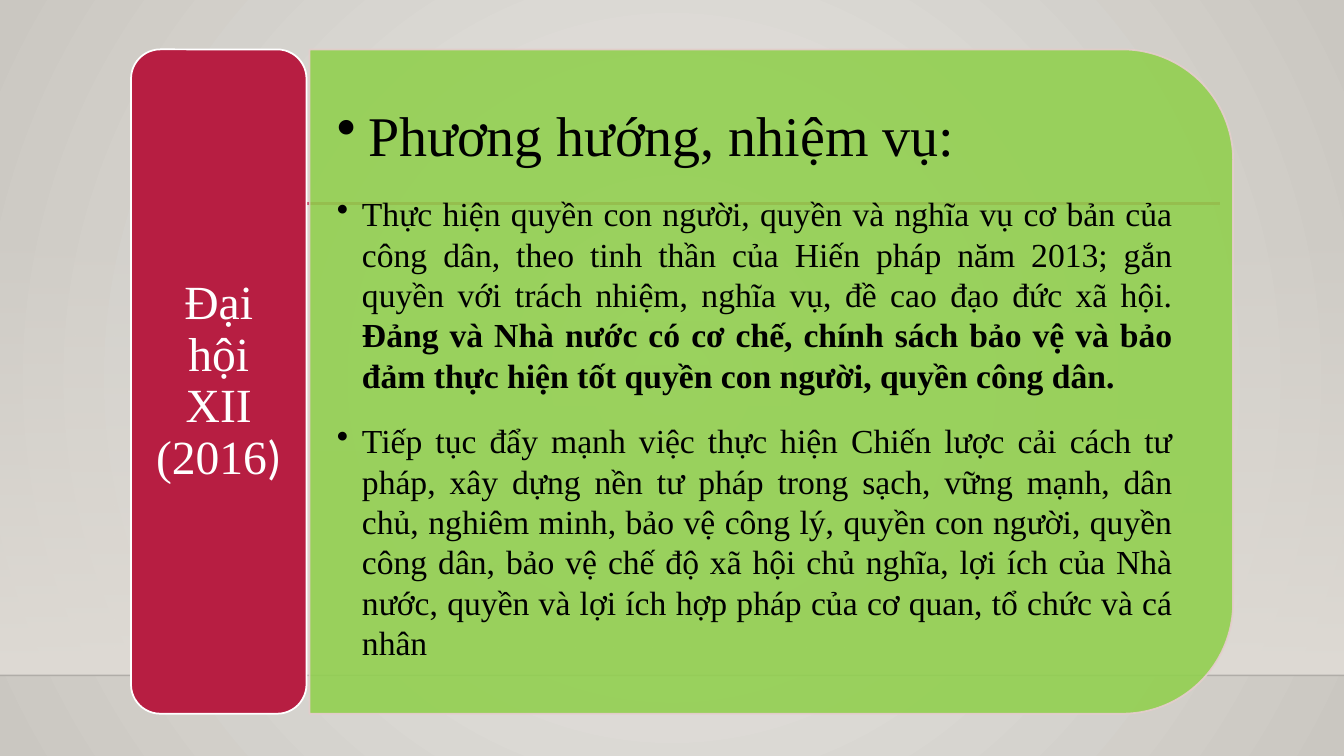
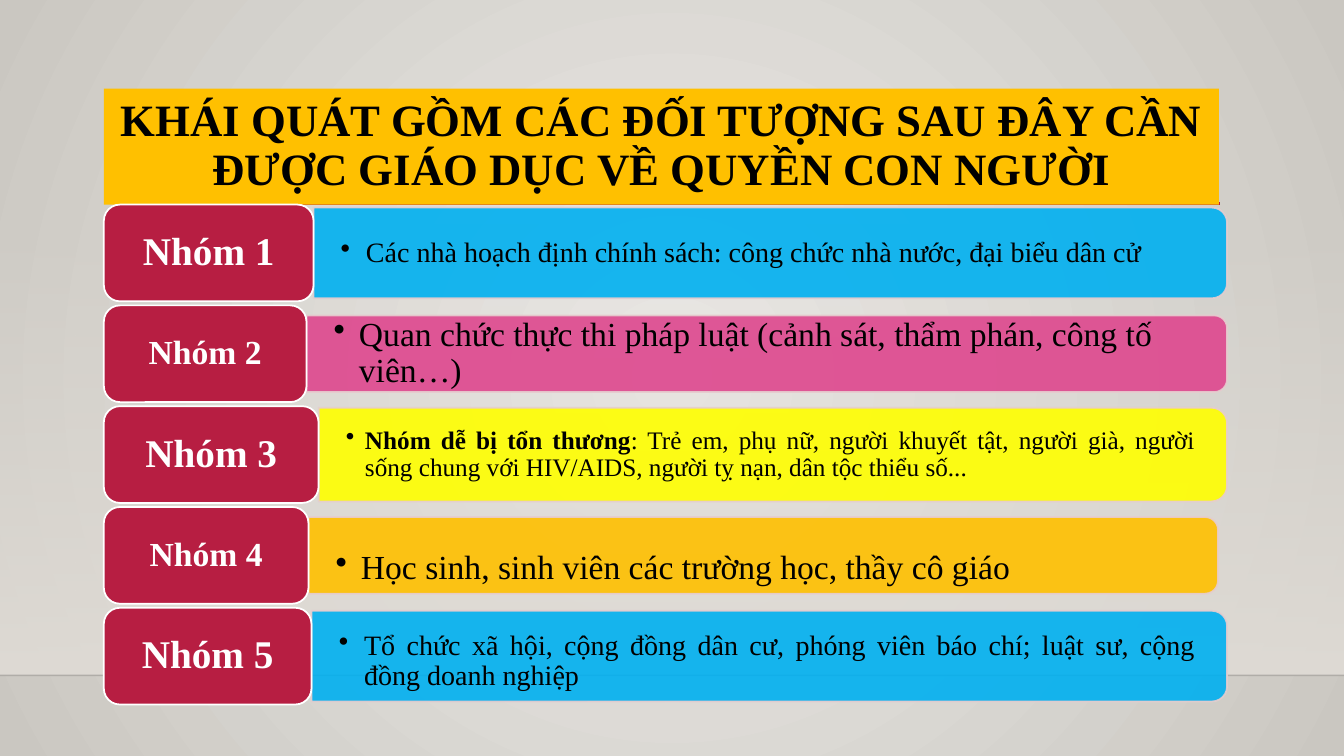
from dataclasses import dataclass

from lxml import etree
from pptx import Presentation, util as u
from pptx.dml.color import RGBColor
from pptx.enum import shapes, text
from pptx.oxml.ns import qn

BLACK = RGBColor(0x00, 0x00, 0x00)
WHITE = RGBColor(0xFF, 0xFF, 0xFF)
CRIMSON = RGBColor(0xB7, 0x1E, 0x42)
GREEN = RGBColor(0x92, 0xD0, 0x50)
BLUE = RGBColor(0x00, 0xB0, 0xF0)
PINK = RGBColor(0xDE, 0x47, 0x8E)
YELLOW = RGBColor(0xFF, 0xFF, 0x00)
AMBER = RGBColor(0xFF, 0xC0, 0x00)
CARD_EDGE = RGBColor(0xE6, 0xCD, 0xCF)
WALL_LIGHT = RGBColor(0xEC, 0xEA, 0xE7)
WALL_DARK = RGBColor(0xCA, 0xC7, 0xC1)
HAZE = RGBColor(0xDF, 0xDB, 0xD5)

SERIF = "Times New Roman"
JUSTIFY = text.PP_ALIGN.JUSTIFY
LEFT = text.PP_ALIGN.LEFT
CENTER = text.PP_ALIGN.CENTER
MIDDLE = text.MSO_ANCHOR.MIDDLE
CORNER_INSET = 0.05  # part of the short side that a rounded corner takes from the text

WIDTH, HEIGHT = 13.33, 7.5
FLOOR = 6.7
RULE = 2.02
MARGIN = 1.03
ROW_TOP, ROW_PITCH, ROW_HEIGHT = 2.03, 1.0, 0.96


@dataclass
class Row:
    """A crimson label and the coloured card to its right; bullets are (size, indent, runs)."""
    label: list
    label_size: int
    label_width: float
    colour: RGBColor
    card_height: float
    bullets: list
    align: int = JUSTIFY
    card_right: float = 12.17
    left: float = MARGIN
    height: float = ROW_HEIGHT
    gap: float = 0
    line_spacing: float = 0.9
    space_after: int = 0
    text_drop: float = 0


def set_alpha(colours, percent):
    for colour in colours:
        etree.SubElement(colour, qn("a:alpha"), val=str(percent * 1000))


def add_runs(paragraph, runs, size, colour):
    """Append (text, bold, font name) runs to a paragraph."""
    for words, bold, name in runs:
        run = paragraph.add_run()
        run.text = words
        run.font.size = u.Pt(size)
        run.font.bold = bold
        run.font.name = name
        run.font.color.rgb = colour


congress = Row(
    [("Đại hội XII (2016", False, SERIF), (")", False, "Calibri")], 34, 1.74, GREEN, 6.59,
    [
        (40, 0.31, [("Phương hướng, nhiệm vụ:", False, SERIF)]),
        (24, 0.25, [
            ("Thực hiện quyền con người, quyền và nghĩa vụ cơ bản của công dân, theo tinh thần "
             "của Hiến pháp năm 2013; gắn quyền với trách nhiệm, nghĩa vụ, đề cao đạo đức "
             "xã hội. ", False, SERIF),
            ("Đảng và Nhà nước có cơ chế, chính sách bảo vệ và bảo đảm thực hiện tốt quyền "
             "con người, quyền công dân.", True, SERIF)]),
        (24, 0.25, [
            ("Tiếp tục đẩy mạnh việc thực hiện Chiến lược cải cách tư pháp, xây dựng nền tư "
             "pháp trong sạch, vững mạnh, dân chủ, nghiêm minh, bảo vệ công lý, quyền con "
             "người, quyền công dân, bảo vệ chế độ xã hội chủ nghĩa, lợi ích của Nhà nước, "
             "quyền và lợi ích hợp pháp của cơ quan, tổ chức và cá nhân", False, SERIF)]),
    ],
    card_right=12.23, left=1.3, height=6.59, gap=0.03, line_spacing=1.0, space_after=18)

groups = [
    Row([("Nhóm 1", True, SERIF)], 28, 2.08, BLUE, 0.9, [(20, 0.25, [
        ("Các nhà hoạch định chính sách: công chức nhà nước, đại biểu dân cử",
         False, SERIF)])]),
    Row([("Nhóm 2", True, SERIF)], 24, 2.01, PINK, 0.76, [(24, 0.25, [
        ("Quan chức thực thi pháp luật (cảnh sát, thẩm phán, công tố viên…)",
         False, SERIF)])], align=LEFT),
    Row([("Nhóm 3", True, SERIF)], 28, 2.13, YELLOW, 0.93, [(18, 0.19, [
        ("Nhóm dễ bị tổn thương", True, SERIF),
        (": Trẻ em, phụ nữ, người khuyết tật, người già, người sống chung với HIV/AIDS, "
         "người tỵ nạn, dân tộc thiểu số...", False, SERIF)])]),
    Row([("Nhóm 4", True, SERIF)], 24, 2.03, AMBER, 0.76, [(24, 0.25, [
        ("Học sinh, sinh viên các trường học, thầy cô giáo", False, SERIF)])],
        align=LEFT, card_right=12.08, text_drop=0.13),
    Row([("Nhóm 5", True, SERIF)], 28, 2.06, BLUE, 0.9, [(20, 0.25, [
        ("Tổ chức xã hội, cộng đồng dân cư, phóng viên báo chí; luật sư, cộng đồng "
         "doanh nghiệp", False, SERIF)])], text_drop=0.05),
]

pages = [
    ("", 0.49, [congress]),
    ("KHÁI QUÁT GỒM CÁC ĐỐI TƯỢNG SAU ĐÂY CẦN ĐƯỢC GIÁO DỤC VỀ QUYỀN CON NGƯỜI",
     ROW_TOP, groups),
]

presentation = Presentation()
presentation.slide_width = u.Inches(WIDTH)
presentation.slide_height = u.Inches(HEIGHT)

# Shared wall: a round gradient on the master
master = presentation.slide_master
wall = master.background.fill
wall.gradient()
for stop, colour in zip(wall.gradient_stops, (WALL_LIGHT, WALL_DARK)):
    stop.color.rgb = colour
gradient = next(master.element.iter(qn("a:gradFill")))
gradient.remove(gradient.find(qn("a:lin")))
circle = etree.SubElement(gradient, qn("a:path"), path="circle")
etree.SubElement(circle, qn("a:fillToRect"), l="50000", t="50000", r="50000", b="50000")

for title, first_top, rows in pages:
    slide = presentation.slides.add_slide(presentation.slide_layouts[6])

    # Haze above the floor, floor edge and title rule
    haze_top = HEIGHT * 0.295
    haze = slide.shapes.add_shape(
        shapes.MSO_SHAPE.RECTANGLE, 0, u.Inches(haze_top),
        u.Inches(WIDTH), u.Inches(FLOOR - haze_top))
    haze.shadow.inherit = False
    haze.line.fill.background()
    haze.fill.gradient()
    haze.fill.gradient_angle = 270
    for stop in haze.fill.gradient_stops:
        stop.color.rgb = HAZE
    set_alpha(list(haze.element.iter(qn("a:srgbClr")))[:1], 0)

    for start, end, y, colour, weight, opacity in (
            (0, WIDTH, FLOOR, BLACK, 1, 20), (1.59, 12.1, RULE, CRIMSON, 2.5, 100)):
        line = slide.shapes.add_connector(
            shapes.MSO_CONNECTOR.STRAIGHT,
            u.Inches(start), u.Inches(y), u.Inches(end), u.Inches(y))
        line.line.color.rgb = colour
        line.line.width = u.Pt(weight)
        set_alpha(line.element.iter(qn("a:srgbClr")), opacity)
        etree.SubElement(line.element.spPr, qn("a:effectLst"))

    if title:
        banner = slide.shapes.add_shape(
            shapes.MSO_SHAPE.RECTANGLE, u.Inches(MARGIN), u.Inches(0.88),
            u.Inches(11.06), u.Inches(1.15))
        banner.shadow.inherit = False
        banner.fill.solid()
        banner.fill.fore_color.rgb = AMBER
        banner.line.fill.background()
        banner.text_frame.word_wrap = True
        banner.text_frame.vertical_anchor = MIDDLE
        paragraph = banner.text_frame.paragraphs[0]
        paragraph.alignment = CENTER
        paragraph.line_spacing = 0.9
        add_runs(paragraph, [(title, True, SERIF)], 32, BLACK)

    for index, row in enumerate(rows):
        top = first_top + index * ROW_PITCH
        middle = top + row.height / 2
        card_left = row.left + row.label_width + row.gap
        card_width = row.card_right - card_left
        card_center = card_left + card_width / 2

        # The card is drawn upright and turned so its round corners face right
        card = slide.shapes.add_shape(
            shapes.MSO_SHAPE.ROUND_2_SAME_RECTANGLE,
            u.Inches(card_center - row.card_height / 2), u.Inches(middle - card_width / 2),
            u.Inches(row.card_height), u.Inches(card_width))
        card.rotation = 90
        card.shadow.inherit = False
        card.fill.solid()
        card.fill.fore_color.rgb = row.colour
        card.line.color.rgb = CARD_EDGE
        card.line.width = u.Pt(1.25)
        set_alpha(card.element.iter(qn("a:srgbClr")), 90)

        inset = CORNER_INSET * row.card_height
        text_height = row.card_height - 2 * inset
        body = slide.shapes.add_textbox(
            u.Inches(card_left), u.Inches(middle - text_height / 2 + row.text_drop),
            u.Inches(card_width - inset), u.Inches(text_height))
        frame = body.text_frame
        frame.word_wrap = True
        frame.vertical_anchor = MIDDLE
        frame.margin_left = frame.margin_right = u.Inches(0.27)
        frame.margin_top = frame.margin_bottom = u.Inches(0.14)
        for number, (size, indent, runs) in enumerate(row.bullets):
            paragraph = frame.add_paragraph() if number else frame.paragraphs[0]
            paragraph.alignment = row.align
            paragraph.line_spacing = row.line_spacing
            paragraph.space_after = u.Pt(row.space_after)
            properties = paragraph._p.get_or_add_pPr()
            properties.set("marL", str(u.Inches(indent)))
            properties.set("indent", str(-u.Inches(indent)))
            etree.SubElement(properties, qn("a:buChar"), char="•")
            add_runs(paragraph, runs, size, BLACK)

        label = slide.shapes.add_shape(
            shapes.MSO_SHAPE.ROUNDED_RECTANGLE, u.Inches(row.left), u.Inches(top),
            u.Inches(row.label_width), u.Inches(row.height))
        label.shadow.inherit = False
        label.fill.solid()
        label.fill.fore_color.rgb = CRIMSON
        label.line.color.rgb = WHITE
        label.line.width = u.Pt(1.25)
        frame = label.text_frame
        frame.word_wrap = True
        frame.vertical_anchor = MIDDLE
        frame.margin_left = frame.margin_right = u.Inches(row.label_size / 240)
        frame.margin_top = frame.margin_bottom = u.Inches(row.label_size / 480)
        paragraph = frame.paragraphs[0]
        paragraph.alignment = CENTER
        paragraph.line_spacing = 0.9
        add_runs(paragraph, row.label, row.label_size, WHITE)

presentation.save("out.pptx")
